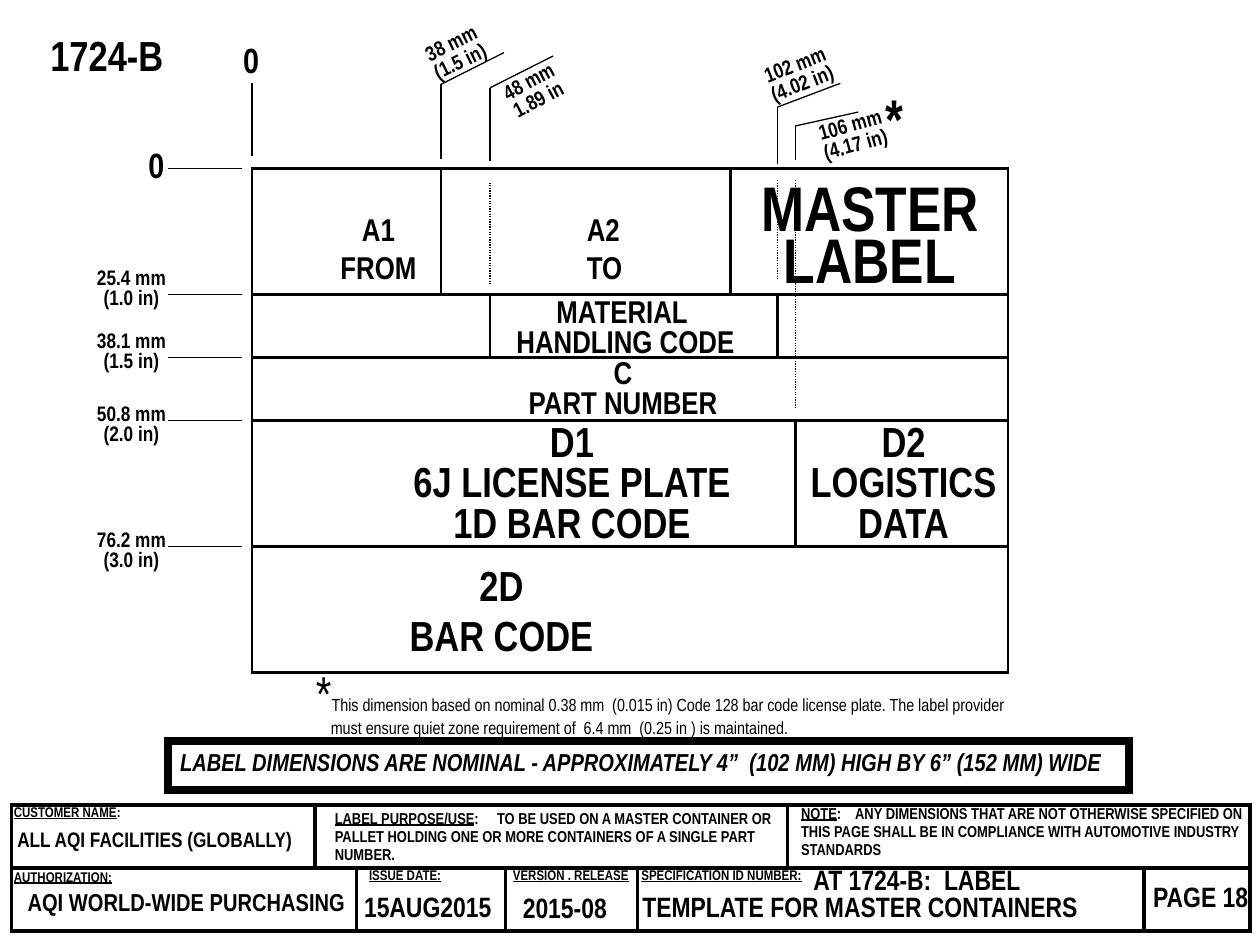
from itertools import pairwise

from lxml import etree
from pptx import Presentation
from pptx.dml.color import RGBColor
from pptx.enum import dml, shapes, text
from pptx.oxml.ns import qn
from pptx.util import Cm, Pt

BLACK, WHITE = "000000", "FFFFFF"
CENTER, LEFT = text.PP_ALIGN.CENTER, text.PP_ALIGN.LEFT
FONT = "Arial Narrow"


def color(value):
    return RGBColor.from_string(value)


def assign(target, values):
    for name, value in values.items():
        setattr(target, name, value)


def add_run(paragraph, content, size, **font):
    run = paragraph.add_run()
    run.text = content
    assign(run.font, {"name": FONT, "size": Pt(size), "bold": True, **font})
    run.font.color.rgb = color(BLACK)


def add_text(slide, origin, box, lines, size, align=LEFT, spacing=0.8, wrap=False,
             angle=0, **font):
    """Place lines of text in a box measured from the region's origin."""
    left, top, width, height = box
    shape = slide.shapes.add_textbox(Cm(origin[0] + left), Cm(origin[1] + top),
                                     Cm(width), Cm(height))
    shape.rotation = angle
    frame = shape.text_frame
    assign(frame, {"word_wrap": wrap, "auto_size": text.MSO_AUTO_SIZE.SHAPE_TO_FIT_TEXT})
    for index, line in enumerate(lines):
        paragraph = frame.add_paragraph() if index else frame.paragraphs[0]
        assign(paragraph, {"alignment": align, "line_spacing": spacing})
        add_run(paragraph, line, size, **font)
    return frame


def add_line(slide, origin, start, end, width=0.75, dotted=False):
    points = [Cm(origin[i] + point[i]) for point in (start, end) for i in (0, 1)]
    line = slide.shapes.add_connector(shapes.MSO_CONNECTOR.STRAIGHT, *points)
    line.line.color.rgb = color(BLACK)
    line.line.width = Pt(width)
    if dotted:
        line.line.dash_style = dml.MSO_LINE.ROUND_DOT
    etree.SubElement(line._element.spPr, qn("a:effectLst"))


def add_frame(slide, box, width, fill=None):
    shape = slide.shapes.add_shape(shapes.MSO_SHAPE.RECTANGLE, *map(Cm, box))
    shape.shadow.inherit = False
    shape.line.color.rgb = color(BLACK)
    shape.line.width = Pt(width)
    if fill:
        shape.fill.solid()
        shape.fill.fore_color.rgb = color(fill)
    else:
        shape.fill.background()
    # Square outer corners
    etree.SubElement(shape.line._get_or_add_ln(), qn("a:miter"), lim="800000")
    return shape


def set_indent(paragraph, left, first=0):
    properties = paragraph._p.get_or_add_pPr()
    properties.set("marL", str(Cm(left)))
    properties.set("indent", str(Cm(first)))


def add_title(slide, box):
    title = slide.shapes.title
    assign(title, dict(zip(("left", "top", "width", "height"), map(Cm, box))))
    frame = title.text_frame
    assign(frame, {"vertical_anchor": text.MSO_ANCHOR.TOP, "word_wrap": True,
                   "auto_size": text.MSO_AUTO_SIZE.NONE})
    frame.paragraphs[0].alignment = LEFT
    add_run(frame.paragraphs[0], "1724-B", 24)


def add_label(slide, box):
    """The label at full scale: one centimetre on the slide is one on the label."""
    add_frame(slide, box, 1.5, WHITE)
    for y in (2.54, 3.81, 5.08, 7.62):
        add_line(slide, box, (0, y), (box[2], y), 1.5)
    for x, top, bottom in ((3.81, 0, 2.54), (9.65, 0, 2.54), (4.8, 2.54, 3.81),
                           (10.59, 2.54, 3.81), (10.95, 5.08, 7.62)):
        add_line(slide, box, (x, top), (x, bottom), 1.5)
    cells = (
        ((1.25, 0.71, 2.6, 1.78), ["A1", "FROM"], 18, CENTER, 1),
        ((6.5, 0.71, 1.24, 1.78), ["A2", "TO"], 18, LEFT, 1),
        ((10.01, 0.28, 4.9, 2.39), ["MASTER", "LABEL"], 36, CENTER, 0.7),
        ((5.08, 2.51, 4.9, 1.47), ["MATERIAL ", "HANDLING CODE"], 18, CENTER, 0.8),
        ((5.31, 3.73, 4.34, 1.47), ["C", "PART NUMBER"], 18, CENTER, 0.8),
        ((2.97, 5.05, 6.96, 2.69), ["D1", "6J LICENSE PLATE", "1D BAR CODE"], 24, CENTER, 0.8),
        ((11, 5.05, 4.27, 2.69), ["D2", "LOGISTICS", "DATA"], 24, CENTER, 0.8),
        ((2.92, 7.75, 4.22, 2.29), ["2D", "BAR CODE"], 24, CENTER, 1),
    )
    for cell in cells:
        add_text(slide, box, *cell)


def add_row_marks(slide, box):
    add_text(slide, box, (-2.34, -0.64, 0.84, 1.09), ["0"], 20, spacing=1)
    add_line(slide, box, (-0.2, 0), (-1.7, 0))
    for y, inches, rise in ((2.54, "1.0", 0.64), (3.81, "1.5", 0.64),
                            (5.08, "2.0", 0.43), (7.62, "3.0", 0.43)):
        add_line(slide, box, (-0.2, y), (-1.7, y))
        add_text(slide, box, (-3.38, y - rise, 1.9, 1.07),
                 [f"{y * 10:.1f} mm", f"({inches} in)"], 12, CENTER)


def add_column_marks(slide, box):
    add_text(slide, box, (-0.43, -2.74, 0.84, 1.09), ["0"], 20, spacing=1, wrap=True)
    add_line(slide, box, (0, -1.73), (0, -0.25))
    # x, elbow, foot, arm rise, text left, text top, angle, lines
    marks = (
        (3.81, -1.7, -0.2, 0.64, 2.95, -2.85, 333.8, ["38 mm", "(1.5 in)"]),
        (4.8, -1.63, -0.15, 0.64, 4.52, -2.08, 331.8, ["48 mm", "1.89 in"]),
        (10.59, -1.24, -0.1, 0.48, 9.86, -2.41, 338.7, ["102 mm", "(4.02 in)"]),
        (10.95, -0.86, -0.18, 0.28, 10.95, -1.19, 344.5, ["106 mm", "(4.17 in)"]),
    )
    for x, elbow, foot, rise, left, top, angle, lines in marks:
        add_line(slide, box, (x, elbow), (x, foot))
        add_line(slide, box, (x, elbow), (x + 1.27, elbow - rise))
        add_text(slide, box, (left, top, 2.34, 1.07), lines, 12, CENTER,
                 wrap=True, angle=angle)
    # Dotted extensions into the label
    for x, top, bottom in ((4.8, 0.28, 2.31), (10.59, 0.23, 2.24), (10.95, 0.23, 4.83)):
        add_line(slide, box, (x, top), (x, bottom), dotted=True)
    add_text(slide, box, (12.52, -1.85, 0.86, 1.6), ["*"], 32, spacing=1)


def add_footnote(slide, box):
    frame = add_text(slide, box, (0, 0, *box[2:]), ["*"], 28, wrap=True, bold=False)
    paragraph = frame.paragraphs[0]
    set_indent(paragraph, 0.3, -0.3)
    add_run(paragraph, "This dimension based on nominal 0.38 mm  (0.015 in) Code 128 bar "
            "code license plate. The label provider must ensure quiet zone requirement "
            "of  6.4 mm  (0.25 in ) is maintained.", 10, bold=False)


def add_notice(slide, box):
    frame = add_frame(slide, box, 4.5).text_frame
    assign(frame, {"word_wrap": False, "vertical_anchor": text.MSO_ANCHOR.TOP})
    frame.paragraphs[0].alignment = LEFT
    add_run(frame.paragraphs[0], "LABEL DIMENSIONS ARE NOMINAL - APPROXIMATELY 4”  (102 MM) "
            "HIGH BY 6” (152 MM) WIDE", 14, italic=True)


def add_title_block(slide, box):
    left, top, width, height = box
    row = height / 2
    # Cells of the two rows
    for index, edges in enumerate(((0, 6.12, 15.65, width),
                                   (0, 6.96, 9.96, 12.62, 22.83, width))):
        for start, end in pairwise(edges):
            add_frame(slide, (left + start, top + index * row, end - start, row), 2)
    # Underlined headings: box, heading, rest, size, tab stop
    headings = (
        ((-0.2, -0.13, 4.62, 0.56), "CUSTOMER NAME", ":", 8, 0),
        ((6.27, -0.03, 10.16, 1.32), "LABEL PURPOSE/USE", ":\tTO BE USED ON A MASTER "
         "CONTAINER OR PALLET HOLDING ONE OR MORE CONTAINERS OF A SINGLE PART NUMBER.", 9, 3.27),
        ((15.67, -0.13, 9.6, 1.32), "NOTE", ":\tANY DIMENSIONS THAT ARE NOT OTHERWISE SPECIFIED "
         "ON THIS PAGE SHALL BE IN COMPLIANCE WITH AUTOMOTIVE INDUSTRY STANDARDS", 9, 1.09),
        ((-0.2, 1.17, 3.05, 0.56), "AUTHORIZATION:", "", 8, 0),
        ((6.96, 1.14, 2.79, 0.56), "ISSUE DATE:", "", 8, 0),
        ((9.86, 1.14, 3.43, 0.56), "VERSION . RELEASE", "", 8, 0),
        ((12.45, 1.14, 4.14, 0.56), "SPECIFICATION ID NUMBER:", "", 8, 0),
    )
    for place, heading, rest, size, tab in headings:
        frame = add_text(slide, box, place, [heading], size, spacing=0.95, wrap=True,
                         underline=True)
        paragraph = frame.paragraphs[0]
        if rest:
            add_run(paragraph, rest, size)
        if tab:
            stops = etree.SubElement(paragraph._p.get_or_add_pPr(), qn("a:tabLst"))
            etree.SubElement(stops, qn("a:tab"), pos=str(Cm(tab)), algn="l")
    # Entries
    entries = (
        ((-0.13, 0.3, 7.85, 0.76), "ALL AQI FACILITIES (GLOBALLY)", 12, LEFT, 1),
        ((-0.23, 1.65, 7.52, 0.71), "AQI WORLD-WIDE PURCHASING", 14, CENTER, 0.8),
        ((6.86, 1.57, 3.78, 0.91), "15AUG2015", 16, LEFT, 1),
        ((10.06, 1.6, 3.56, 0.91), "2015-08", 16, LEFT, 1),
        ((22.63, 1.5, 2.69, 0.79), "PAGE 18", 16, CENTER, 0.8),
    )
    for place, entry, size, align, spacing in entries:
        add_text(slide, box, place, [entry], size, align, spacing, wrap=True)
    specification = add_text(slide, box, (12.47, 1.17, 9.6, 1.32),
                             ["AT 1724-B:  LABEL", "TEMPLATE FOR MASTER CONTAINERS"],
                             16, wrap=True)
    set_indent(specification.paragraphs[0], 3.45)


def main():
    presentation = Presentation()
    presentation.slide_width, presentation.slide_height = Cm(25.4), Cm(19.05)
    slide = presentation.slides.add_slide(presentation.slide_layouts[5])
    label_box = (5.08, 3.4, 15.24, 10.16)
    add_title(slide, (0.76, 0.46, 3.76, 1.27))
    add_footnote(slide, (6.12, 13.46, 14.58, 1.55))
    add_notice(slide, (3.38, 14.94, 19.38, 0.99))
    for build in (add_label, add_row_marks, add_column_marks):
        build(slide, label_box)
    add_title_block(slide, (0.23, 16.23, 24.97, 2.54))
    presentation.save("out.pptx")


if __name__ == "__main__":
    main()
